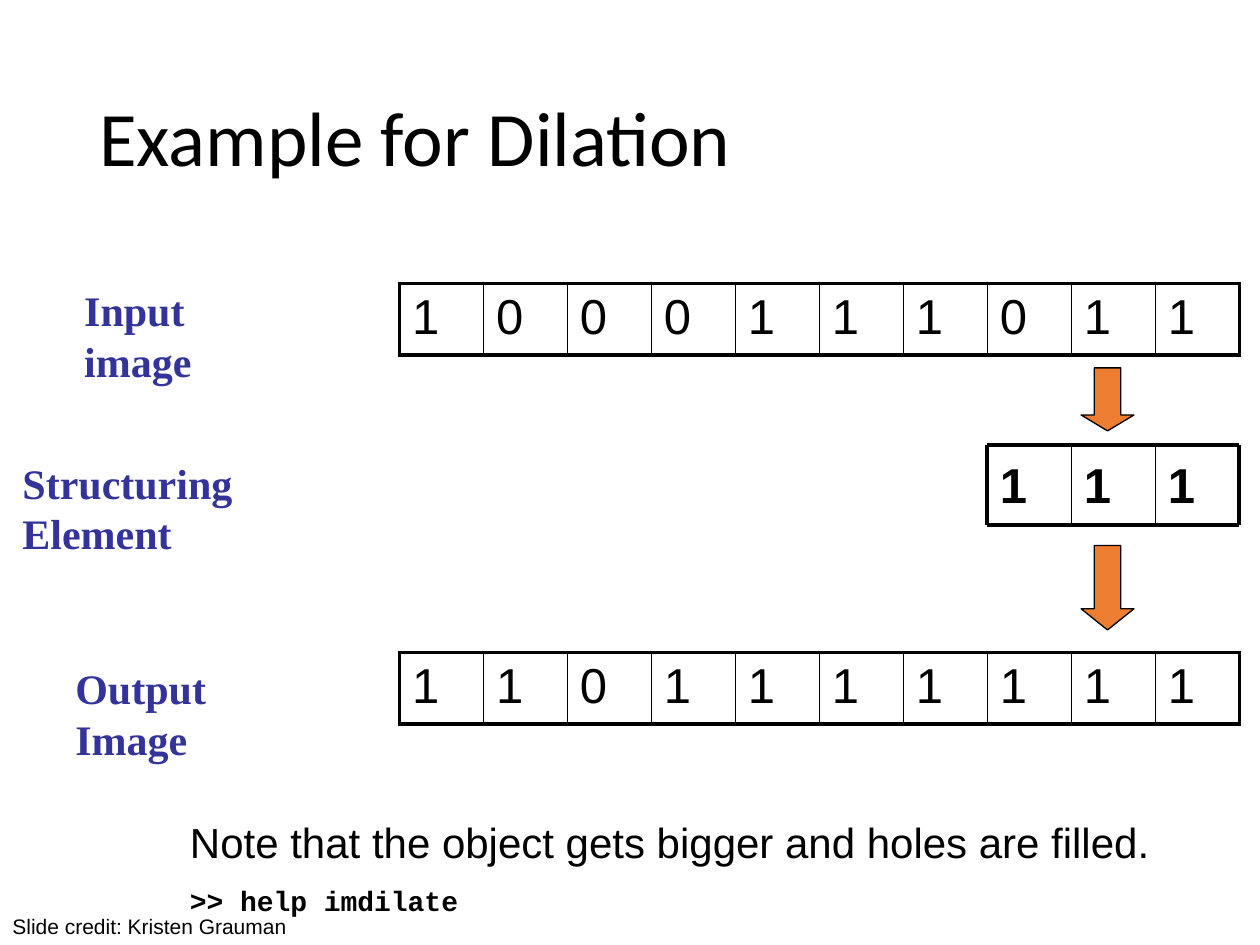
from typing import NamedTuple

from lxml import etree
from pptx import Presentation
from pptx import util as u
from pptx.dml.color import RGBColor
from pptx.enum import shapes, text
from pptx.oxml.ns import qn

WIDTH, HEIGHT = 10, 7.5
GRID_LEFT, CELL_W = 3.17, 2 / 3
BLACK, NAVY, ORANGE = "000000", "333399", "ED7D31"
OUTER, INNER = 2.25, 1


class Label(NamedTuple):
    text: str
    left: float
    top: float
    width: float


class Strip(NamedTuple):
    values: str
    first_col: int
    top: float
    height: float


class Arrow(NamedTuple):
    top: float
    height: float
    head: float


LABELS = [
    Label("Input image", 0.57, 2.21, 1.8),
    Label("Structuring Element", 0.08, 3.58, 2.89),
    Label("Output Image", 0.5, 5.21, 2.04),
]
IMAGE_ROWS = [
    Strip("1000111011", 0, 2.25, 0.55),
    Strip("1101111111", 0, 5.18, 0.56),
]
STRUCTURING = Strip("111", 7, 3.53, 0.64)
ARROWS = [Arrow(4.33, 0.67, 0.4), Arrow(2.92, 0.5, 0.3)]


def rgb(color: str) -> RGBColor:
    return RGBColor.from_string(color)


def column_x(col: int) -> float:
    return GRID_LEFT + col * CELL_W


def write(p, content: str, *, size: float, font: str = "Arial",
          color: str = BLACK, bold: bool = False, spacing: float = 1) -> None:
    p.line_spacing = spacing
    r = p.add_run()
    r.text = content
    r.font.name, r.font.size, r.font.bold = font, u.Pt(size), bold
    r.font.color.rgb = rgb(color)


def add_box(s, left: float, top: float, width: float, height: float):
    tf = s.shapes.add_textbox(*map(u.Inches, (left, top, width, height))).text_frame
    tf.word_wrap = True
    return tf


def add_border(cell, side: str, points: float) -> None:
    """Draw one side (L, R, T or B) of a table cell as a solid black line."""
    ln = etree.SubElement(cell._tc.get_or_add_tcPr(), qn(f"a:ln{side}"),
                          w=str(u.Pt(points)))
    fill = etree.SubElement(ln, qn("a:solidFill"))
    etree.SubElement(fill, qn("a:srgbClr"), val=BLACK)


def draw_image_row(s, strip: Strip) -> None:
    count = len(strip.values)
    table = s.shapes.add_table(1, count, *map(u.Inches, (
        column_x(strip.first_col), strip.top, count * CELL_W, strip.height))).table
    table.first_row = table.horz_banding = False
    for i, value in enumerate(strip.values):
        cell = table.cell(0, i)
        write(cell.text_frame.paragraphs[0], value, size=28)
        add_border(cell, "L", OUTER if i == 0 else INNER)
        add_border(cell, "R", OUTER if i == count - 1 else INNER)
        add_border(cell, "T", OUTER)
        add_border(cell, "B", OUTER)
        cell.fill.background()


def draw_line(s, x1: float, y1: float, x2: float, y2: float, points: float) -> None:
    line = s.shapes.add_connector(shapes.MSO_CONNECTOR.STRAIGHT,
                                  *map(u.Inches, (x1, y1, x2, y2)))
    line.line.color.rgb = rgb(BLACK)
    line.line.width = u.Pt(points)
    etree.SubElement(line._element.spPr, qn("a:effectLst"))


def draw_structuring_element(s, strip: Strip) -> None:
    """Draw the values as separate boxes inside a grid of ruled lines."""
    count, bottom = len(strip.values), strip.top + strip.height
    edges = [column_x(strip.first_col + i) for i in range(count + 1)]
    for x, value in zip(edges, strip.values):
        tf = add_box(s, x, strip.top, CELL_W, strip.height)
        tf.margin_top = u.Inches(0.08)
        write(tf.paragraphs[0], value, size=28, bold=True)
    for y in (strip.top, bottom):
        draw_line(s, edges[0], y, edges[-1], y, OUTER)
    for i, x in enumerate(edges):
        draw_line(s, x, strip.top, x, bottom, OUTER if i in (0, count) else INNER)


def draw_arrow(s, arrow: Arrow) -> None:
    sp = s.shapes.add_shape(shapes.MSO_SHAPE.DOWN_ARROW,
                            *map(u.Inches, (8.58, arrow.top, 0.42, arrow.height)))
    sp.adjustments[0], sp.adjustments[1] = 0.5, arrow.head
    sp.shadow.inherit = False
    sp.fill.solid()
    sp.fill.fore_color.rgb = rgb(ORANGE)
    sp.line.color.rgb = rgb(BLACK)
    sp.line.width = u.Pt(0.75)


def main() -> None:
    prs = Presentation()
    prs.slide_width, prs.slide_height = u.Inches(WIDTH), u.Inches(HEIGHT)
    s = prs.slides.add_slide(prs.slide_layouts[6])

    title = add_box(s, 0.69, 0.4, 8.62, 1.45)
    title.vertical_anchor = text.MSO_ANCHOR.MIDDLE
    write(title.paragraphs[0], "Example for Dilation", size=44, font="Calibri", spacing=0.9)

    for label in LABELS:
        tf = add_box(s, label.left, label.top, label.width, 0.5)
        write(tf.paragraphs[0], label.text, size=24, font="Times New Roman",
              color=NAVY, bold=True)
    for row in IMAGE_ROWS:
        draw_image_row(s, row)
    draw_structuring_element(s, STRUCTURING)
    for arrow in ARROWS:
        draw_arrow(s, arrow)

    note = add_box(s, 1.41, 6.23, 7.9, 1.08)
    write(note.paragraphs[0], "Note that the object gets bigger and holes are filled.",
          size=24, spacing=1.5)
    write(note.add_paragraph(), ">> help imdilate", size=16, font="Courier New",
          bold=True, spacing=1.5)

    credit = add_box(s, 0, 7.2, 4.58, 0.3)
    write(credit.paragraphs[0], "Slide credit: Kristen Grauman", size=12)

    prs.save("out.pptx")


if __name__ == "__main__":
    main()
